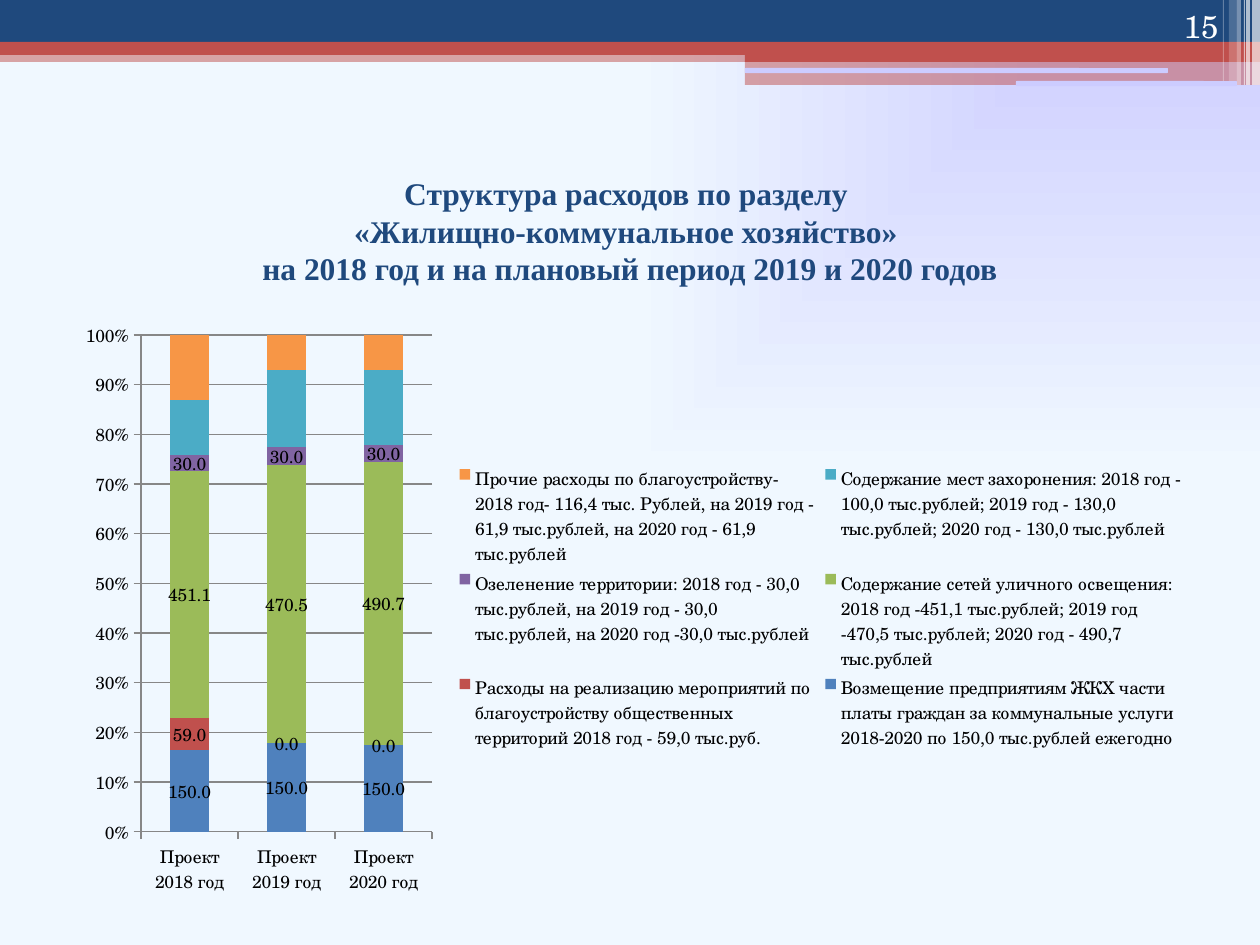
from lxml import etree
from pptx import Presentation
from pptx.chart.data import CategoryChartData
from pptx.dml.color import RGBColor
from pptx.enum.chart import XL_CHART_TYPE, XL_LEGEND_POSITION, XL_TICK_MARK
from pptx.enum.shapes import MSO_SHAPE
from pptx.enum.text import MSO_ANCHOR, PP_ALIGN
from pptx.oxml.ns import qn
from pptx.util import Emu, Pt

PX_PER_INCH = 126
SERIF, SCHOOL = "Times New Roman", "TeX Gyre Schola"
COLORS = {
    "navy": "1F497D", "red": "C0504D", "white": "FFFFFF", "black": "000000",
    "lilac": "CCCCFF", "ice": "F0F8FF", "grid": "878787", "blue": "4F81BD",
    "green": "9BBB59", "purple": "8064A2", "teal": "4BACC6", "orange": "F79646",
}

# left, top, width, height, colour, opacity in percent
BANDS = [
    (0, 50, 1260, 12, "red", 50),
    (0, 0, 1260, 43, "navy", 100),
    (0, 42, 1260, 13, "red", 100),
    (745, 49, 515, 13, "red", 100),
    (745, 61, 515, 24, "red", 50),
]
SLOTS = [(745, 68, 423, 5), (1016, 81, 221, 5)]
STRIPES = [
    (1252, 0, 8, 85, "white", 65),
    (1246, 0, 4, 85, "white", 65),
    (1244, 0, 1, 85, "white", 60),
    (1237, 0, 4, 85, "white", 40),
    (1229, 0, 8, 81, "white", 20),
    (1223, 0, 1, 81, "white", 30),
]

TITLE_LINES = [
    "Структура расходов по разделу ",
    "«Жилищно-коммунальное хозяйство» ",
    "на 2018 год и на плановый период 2019 и 2020 годов",
]
YEARS = ["Проект 2018 год", "Проект 2019 год", "Проект 2020 год"]
# name, values, colour, labelled
EXPENSES = [
    ("Возмещение предприятиям ЖКХ части платы граждан за коммунальные услуги "
     "2018-2020 по 150,0 тыс.рублей ежегодно", (150, 150, 150), "blue", True),
    ("Расходы на реализацию мероприятий по благоустройству общественных "
     "территорий 2018 год - 59,0 тыс.руб.", (59, 0, 0), "red", True),
    ("Содержание сетей уличного освещения: 2018 год -451,1 тыс.рублей; 2019 год "
     "-470,5 тыс.рублей; 2020 год - 490,7 тыс.рублей",
     (451.1, 470.5, 490.7), "green", True),
    ("Озеленение территории: 2018 год - 30,0 тыс.рублей, на 2019 год - 30,0 "
     "тыс.рублей, на 2020 год -30,0 тыс.рублей", (30, 30, 30), "purple", True),
    ("Содержание мест захоронения: 2018 год - 100,0 тыс.рублей; 2019 год - 130,0 "
     "тыс.рублей; 2020 год - 130,0 тыс.рублей", (100, 130, 130), "teal", False),
    ("Прочие расходы по благоустройству- 2018 год- 116,4 тыс. Рублей, на 2019 "
     "год - 61,9 тыс.рублей, на 2020 год - 61,9 тыс.рублей",
     (120, 60, 60), "orange", False),
]
CHART_BOX = (63, 310, 1134, 596)
PLOT_BOX = (141, 335, 291, 497)


def px(length):
    return Emu(round(length * 914400 / PX_PER_INCH))


def rgb(name):
    return RGBColor.from_string(COLORS[name])


def fill_corner_glow(slide):
    """Background gradient that spreads from the top right corner."""
    fill = slide.background.fill
    fill.gradient()
    for stop, color in zip(fill.gradient_stops, ("lilac", "ice")):
        stop.color.rgb = rgb(color)
    gradient = slide._element.find(".//" + qn("a:gradFill"))
    gradient.remove(gradient.find(qn("a:lin")))
    path = etree.SubElement(gradient, qn("a:path"), path="rect")
    etree.SubElement(path, qn("a:fillToRect"), l="100000", b="100000")


def add_band(slide, left, top, width, height, color, opacity=100,
             preset=MSO_SHAPE.RECTANGLE):
    band = slide.shapes.add_shape(preset, *map(px, (left, top, width, height)))
    band.shadow.inherit = False
    band.line.fill.background()
    band.fill.solid()
    band.fill.fore_color.rgb = rgb(color)
    if opacity < 100:
        tint = band._element.spPr.find(".//" + qn("a:srgbClr"))
        etree.SubElement(tint, qn("a:alpha"), val=str(opacity * 1000))


def add_text(slide, box, lines, font_name, color, align, anchor, bold=False):
    frame = slide.shapes.add_textbox(*map(px, box)).text_frame
    frame.word_wrap = True
    frame.vertical_anchor = anchor
    paragraph = frame.paragraphs[0]
    paragraph.alignment = align
    for number, line in enumerate(lines):
        if number:
            paragraph.add_line_break()
        run = paragraph.add_run()
        run.text = line
        run.font.name = font_name
        run.font.size = Pt(18)
        run.font.bold = bold
        run.font.color.rgb = rgb(color)


def set_plot_layout(plot_area, box):
    """Place the inner plot area by its box on the slide."""
    for old in plot_area.findall(qn("c:layout")):
        plot_area.remove(old)
    layout = etree.Element(qn("c:layout"))
    manual = etree.SubElement(layout, qn("c:manualLayout"))
    etree.SubElement(manual, qn("c:layoutTarget"), val="inner")
    for mode in ("xMode", "yMode"):
        etree.SubElement(manual, qn("c:" + mode), val="edge")
    left, top, width, height = CHART_BOX
    shares = ((box[0] - left) / width, (box[1] - top) / height,
              box[2] / width, box[3] / height)
    for key, share in zip("xywh", shares):
        etree.SubElement(manual, qn("c:" + key), val=f"{share:.4f}")
    plot_area.insert(0, layout)


def style_line(line):
    line.color.rgb = rgb("grid")
    line.width = Pt(0.75)


def style_axis(axis):
    axis.major_tick_mark = XL_TICK_MARK.OUTSIDE
    axis.minor_tick_mark = XL_TICK_MARK.NONE
    style_line(axis.format.line)


def style_series(series, color, labelled):
    series.format.fill.solid()
    series.format.fill.fore_color.rgb = rgb(color)
    if labelled:
        labels = series.data_labels
        labels.show_value = True
        labels.number_format = "0.0"
        labels.number_format_is_linked = False


def add_expense_chart(slide):
    data = CategoryChartData(number_format="0.0")
    data.categories = YEARS
    for name, values, _, _ in EXPENSES:
        data.add_series(name, values)
    chart = slide.shapes.add_chart(
        XL_CHART_TYPE.COLUMN_STACKED_100, *map(px, CHART_BOX), data).chart
    chart.has_title = False
    chart.font.name = SCHOOL
    chart.font.size = Pt(10)
    chart.font.color.rgb = rgb("black")

    plot = chart.plots[0]
    plot.vary_by_categories = False
    plot.gap_width = 150
    plot.overlap = 100
    for series, (_, _, color, labelled) in zip(plot.series, EXPENSES):
        style_series(series, color, labelled)

    for axis in (chart.category_axis, chart.value_axis):
        style_axis(axis)
    shares = chart.value_axis
    shares.has_major_gridlines = True
    style_line(shares.major_gridlines.format.line)
    shares.tick_labels.number_format = "0%"
    shares.tick_labels.number_format_is_linked = False

    chart.has_legend = True
    chart.legend.position = XL_LEGEND_POSITION.RIGHT
    chart.legend.include_in_layout = False
    plot_area = chart._chartSpace.find(".//" + qn("c:plotArea"))
    set_plot_layout(plot_area, PLOT_BOX)


def main():
    deck = Presentation()
    deck.slide_width, deck.slide_height = px(1260), px(945)
    slide = deck.slides.add_slide(deck.slide_layouts[6])
    fill_corner_glow(slide)
    for band in BANDS:
        add_band(slide, *band)
    for slot in SLOTS:
        add_band(slide, *slot, "lilac", preset=MSO_SHAPE.ROUNDED_RECTANGLE)
    for stripe in STRIPES:
        add_band(slide, *stripe)
    add_text(slide, (63, 157, 1134, 147), TITLE_LINES, SERIF, "navy",
             PP_ALIGN.CENTER, MSO_ANCHOR.MIDDLE, bold=True)
    add_text(slide, (1126, 0, 105, 51), ["15"], SCHOOL, "white",
             PP_ALIGN.RIGHT, MSO_ANCHOR.BOTTOM)
    add_expense_chart(slide)
    deck.save("out.pptx")


if __name__ == "__main__":
    main()
